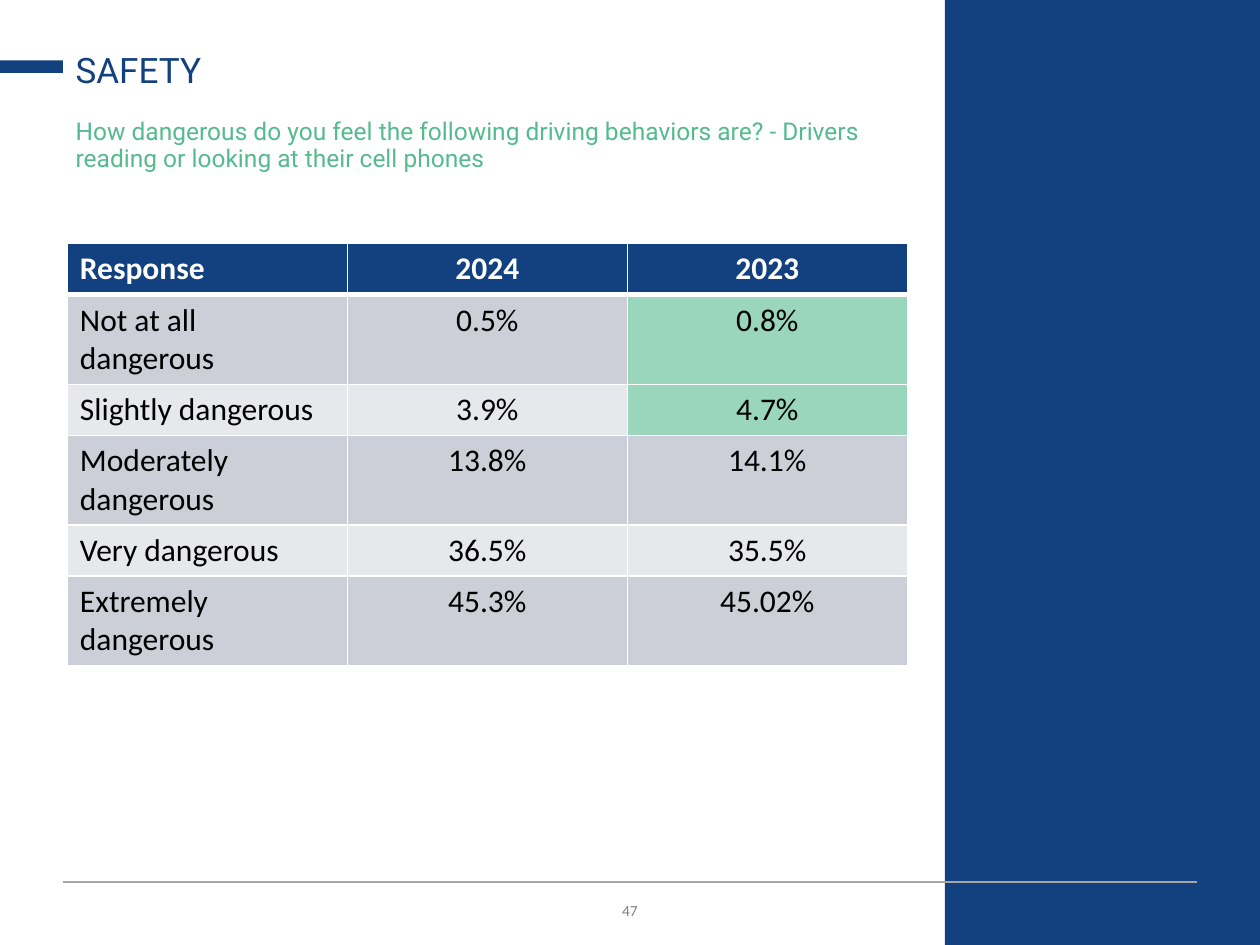
from lxml import etree
from pptx import Presentation
from pptx.dml.color import RGBColor
from pptx.enum import shapes, text
from pptx.oxml import ns
from pptx.util import Pt

# Content
TITLE = "SAFETY"
QUESTION = ("How dangerous do you feel the following driving behaviors are? - "
            "Drivers reading or looking at their cell phones")
PAGE_NUMBER = "47"
ROWS = [
    ("Response", "2024", "2023"),
    ("Not at all dangerous", "0.5%", "0.8%"),
    ("Slightly dangerous", "3.9%", "4.7%"),
    ("Moderately dangerous", "13.8%", "14.1%"),
    ("Very dangerous", "36.5%", "35.5%"),
    ("Extremely dangerous", "45.3%", "45.02%"),
]
HIGHLIGHTED = {(1, 2), (2, 2)}

# Style
NAVY, GREEN, MINT, WHITE = "13407E", "55BA8F", "99D6BC", "FFFFFF"
BANDS = ("E7E8EC", "CCCFD8")
LEFT, CENTER = text.PP_ALIGN.LEFT, text.PP_ALIGN.CENTER
TOP, MIDDLE, BOTTOM = (text.MSO_ANCHOR.TOP, text.MSO_ANCHOR.MIDDLE,
                       text.MSO_ANCHOR.BOTTOM)


def color(value):
    return RGBColor.from_string(value)


def place(shape, left, top, width, height):
    shape.left, shape.top = Pt(left), Pt(top)
    shape.width, shape.height = Pt(width), Pt(height)


def write(frame, words, *, size, fill, font="Calibri", bold=False,
          align=LEFT, spacing=None, small_caps=False):
    para = frame.paragraphs[0]
    para.alignment = align
    if spacing:
        para.line_spacing = spacing
        para.space_before = Pt(0)
    span = para.add_run()
    span.text = words
    span.font.name, span.font.size, span.font.bold = font, Pt(size), bold
    span.font.color.rgb = color(fill)
    if small_caps:
        span.font._element.set("cap", "small")
    return para


def setup_frame(shape, anchor):
    frame = shape.text_frame
    frame.word_wrap = True
    frame.auto_size = text.MSO_AUTO_SIZE.NONE
    frame.vertical_anchor = anchor
    return frame


def add_block(page, *bounds):
    block = page.shapes.add_shape(shapes.MSO_SHAPE.RECTANGLE, *map(Pt, bounds))
    block.shadow.inherit = False
    block.fill.solid()
    block.fill.fore_color.rgb = color(NAVY)
    block.line.fill.background()


def set_borders(cell, widths):
    properties = cell._tc.get_or_add_tcPr()
    for position, (side, width) in enumerate(widths.items()):
        line = etree.Element(ns.qn(f"a:ln{side}"), w=str(Pt(width)))
        fill = etree.SubElement(line, ns.qn("a:solidFill"))
        etree.SubElement(fill, ns.qn("a:srgbClr"), val=WHITE)
        properties.insert(position, line)


deck = Presentation()
deck.slide_width, deck.slide_height = Pt(720), Pt(540)
page = deck.slides.add_slide(deck.slide_layouts[1])

# Side panel, footer rule and title accent
add_block(page, 540, 0, 180, 540)
rule = page.shapes.add_connector(shapes.MSO_CONNECTOR.STRAIGHT,
                                 Pt(36), Pt(504), Pt(684), Pt(504))
rule.line.color.rgb = color("A6A6A6")
rule.line.width = Pt(0.75)
etree.SubElement(rule._element.spPr, ns.qn("a:effectLst"))
add_block(page, 0, 34.5, 36, 7.2)

# Page number
number = page.shapes.add_textbox(Pt(36), Pt(508.3), Pt(648), Pt(21.6))
write(setup_frame(number, MIDDLE), PAGE_NUMBER, size=11, fill="808080",
      align=CENTER, small_caps=True)

# Title and question
title, body = page.shapes.title, page.placeholders[1]
place(title, 36, 21, 482.4, 34.5)
write(setup_frame(title, BOTTOM), TITLE, size=20, fill=NAVY, font="Roboto",
      spacing=0.9)
place(body, 36, 64.8, 482.4, 48.2)
para = write(setup_frame(body, TOP), QUESTION, size=14, fill=GREEN,
             font="Roboto", spacing=0.9)
settings = para._p.get_or_add_pPr()
settings.set("marL", "0")
settings.set("indent", "0")
etree.SubElement(settings, ns.qn("a:buNone"))

# Response table
COLUMN_WIDTH, ROW_HEIGHT = 160, 29.2
table = page.shapes.add_table(
    len(ROWS), len(ROWS[0]), Pt(38.5), Pt(139.2),
    Pt(COLUMN_WIDTH * len(ROWS[0])), Pt(ROW_HEIGHT * len(ROWS))).table
for column in table.columns:
    column.width = Pt(COLUMN_WIDTH)
for r, values in enumerate(ROWS):
    table.rows[r].height = Pt(ROW_HEIGHT)
    header = r == 0
    for c, value in enumerate(values):
        cell = table.cell(r, c)
        fill = NAVY if header else MINT if (r, c) in HIGHLIGHTED else BANDS[r % 2]
        cell.fill.solid()
        cell.fill.fore_color.rgb = color(fill)
        write(cell.text_frame, value, size=18, bold=header,
              fill=WHITE if header else "000000", align=CENTER if c else LEFT)
        set_borders(cell, {"L": 1, "R": 1, "T": 3 if r == 1 else 1,
                           "B": 3 if header else 1})

deck.save("out.pptx")
